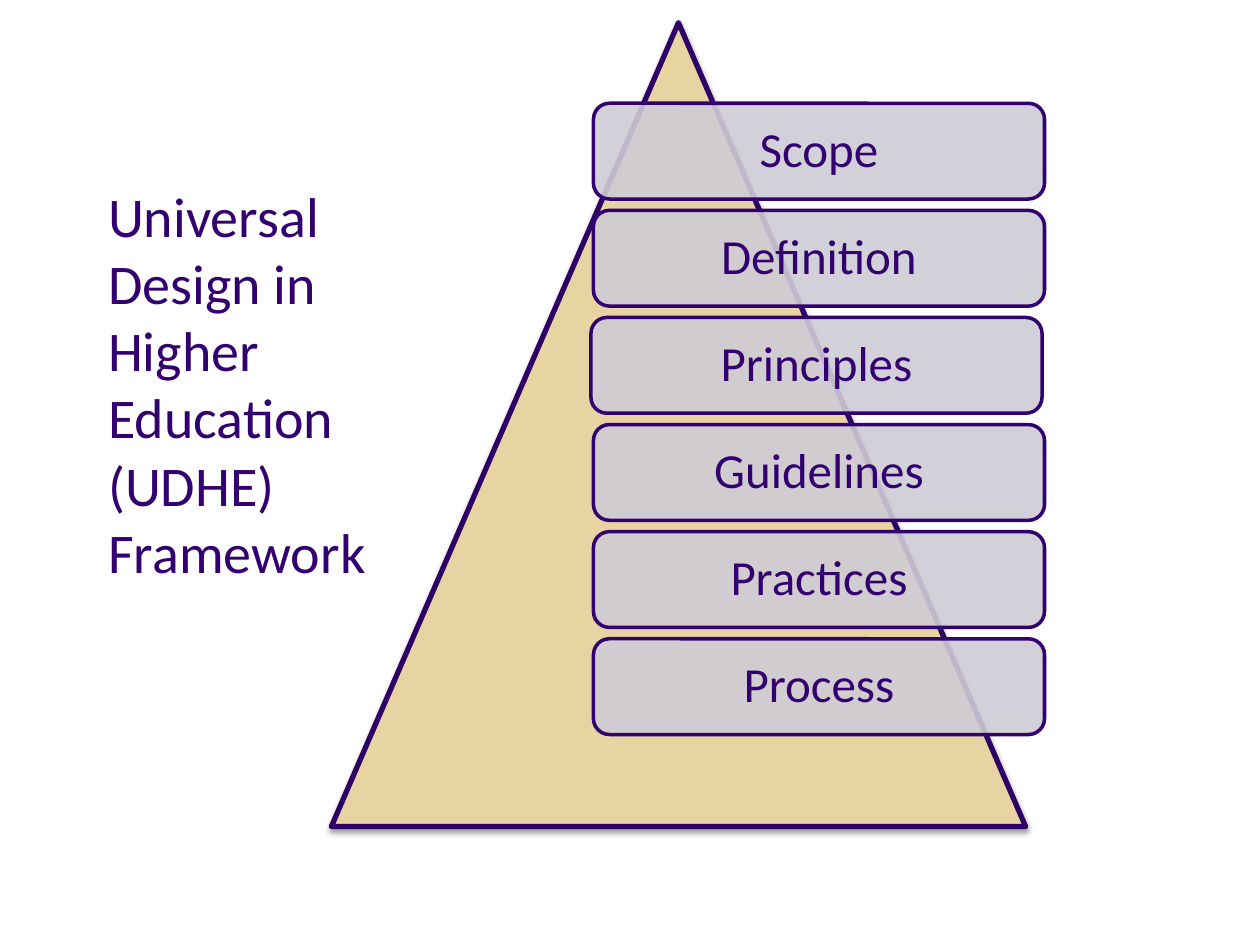
from dataclasses import dataclass

from lxml import etree
from pptx import Presentation
from pptx import util as u
from pptx.dml.color import RGBColor
from pptx.enum import shapes, text
from pptx.oxml import ns


@dataclass(frozen=True)
class Theme:
    font: str = "Calibri"
    purple: RGBColor = RGBColor(0x33, 0x00, 0x6F)
    outline: RGBColor = RGBColor(0x2E, 0x00, 0x65)
    gold: RGBColor = RGBColor(0xE8, 0xD3, 0xA2)
    lavender: RGBColor = RGBColor(0xCE, 0xCC, 0xD5)
    title_size: u.Pt = u.Pt(32)
    level_size: u.Pt = u.Pt(28)


theme = Theme()


def add_filled(kind, left, top, width, height, fill, line, weight):
    """Add a preset shape with a solid fill, an outline and no theme shadow."""
    sp = s.shapes.add_shape(kind, u.Inches(left), u.Inches(top),
                            u.Inches(width), u.Inches(height))
    sp.shadow.inherit = False
    sp.fill.solid()
    sp.fill.fore_color.rgb = fill
    sp.line.color.rgb = line
    sp.line.width = u.Pt(weight)
    return sp


def write(tf, words, size):
    tf.word_wrap = True
    tf.text = words
    p = tf.paragraphs[0]
    font = p.runs[0].font
    font.name = theme.font
    font.size = size
    font.color.rgb = theme.purple
    return p


prs = Presentation()
prs.slide_width, prs.slide_height = u.Inches(10), u.Inches(7.5)
s = prs.slides.add_slide(prs.slide_layouts[6])

# Pyramid with a soft shadow below
pyramid = add_filled(shapes.MSO_SHAPE.ISOSCELES_TRIANGLE, 2.63, 0.18, 5.51, 6.38,
                     theme.gold, theme.outline, 3)
effects = pyramid._element.spPr.find(ns.qn("a:effectLst"))
shadow = etree.SubElement(effects, ns.qn("a:outerShdw"), blurRad=str(u.Pt(3.1)),
                          dist=str(u.Pt(1.6)), dir="5400000", rotWithShape="0")
black = etree.SubElement(shadow, ns.qn("a:srgbClr"), val="000000")
etree.SubElement(black, ns.qn("a:alpha"), val="38000")

# Framework levels, evenly stacked over the pyramid
levels = ["Scope", "Definition", "Principles", "Guidelines", "Practices", "Process"]
level_top, level_pitch = 0.82, 0.85
for i, level in enumerate(levels):
    left = 4.69 if level == "Principles" else 4.71
    box = add_filled(shapes.MSO_SHAPE.ROUNDED_RECTANGLE, left,
                     level_top + i * level_pitch, 3.58, 0.76,
                     theme.lavender, theme.purple, 2)
    colour = box._element.spPr.find(ns.qn("a:solidFill"))[0]
    etree.SubElement(colour, ns.qn("a:alpha"), val="90000")
    tf = box.text_frame
    tf.margin_left = tf.margin_right = tf.margin_top = tf.margin_bottom = u.Inches(0.12)
    tf.vertical_anchor = text.MSO_ANCHOR.MIDDLE
    p = write(tf, level, theme.level_size)
    p.alignment = text.PP_ALIGN.CENTER
    p.line_spacing = 0.9

# Title beside the pyramid
title = s.shapes.add_textbox(u.Inches(0.76), u.Inches(1.39), u.Inches(2.34), u.Inches(3.33))
write(title.text_frame, "Universal Design in Higher Education (UDHE) Framework",
      theme.title_size)
title.text_frame.auto_size = text.MSO_AUTO_SIZE.SHAPE_TO_FIT_TEXT

prs.save("out.pptx")
